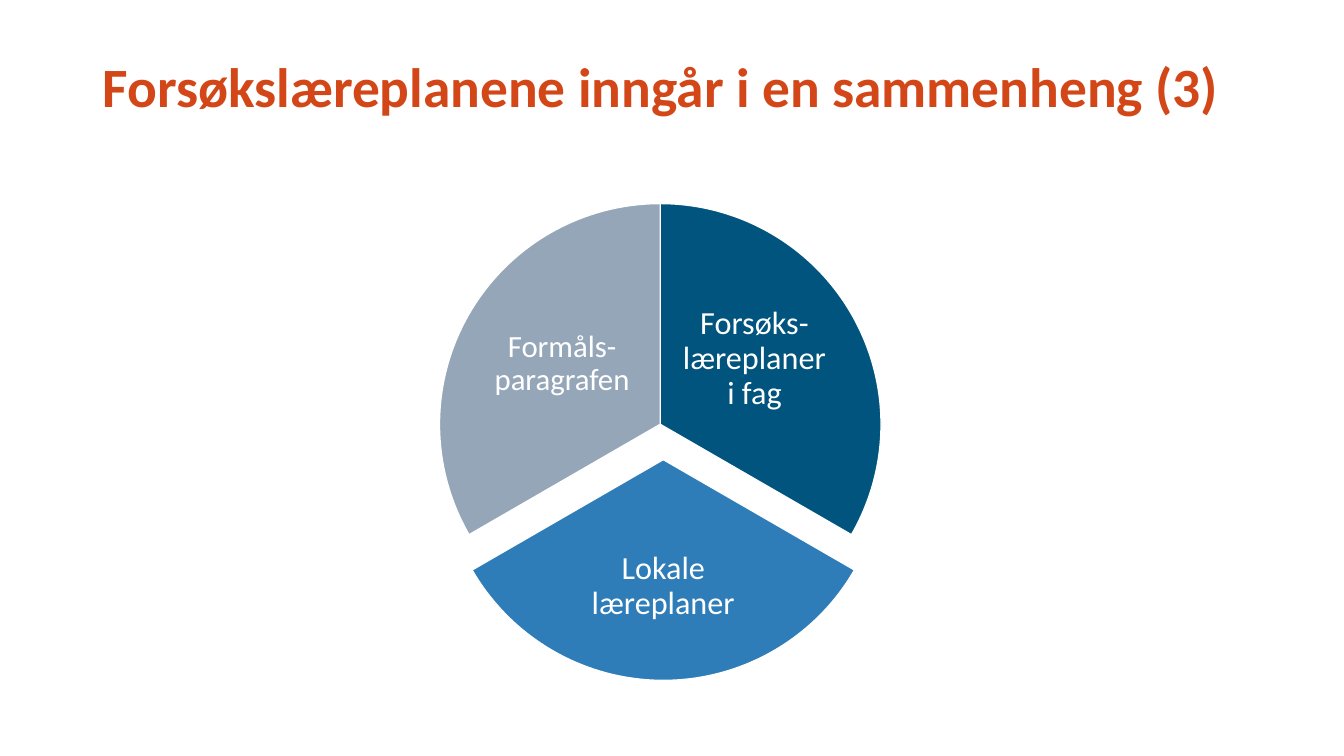
from dataclasses import dataclass
from pptx import Presentation
from pptx.dml.color import RGBColor
from pptx.enum.shapes import MSO_SHAPE
from pptx.enum.text import MSO_ANCHOR, PP_ALIGN
from pptx.util import Pt


@dataclass(frozen=True)
class Theme:
    font: str = "Calibri"
    title: str = "D24617"
    white: str = "FFFFFF"
    navy: str = "00547E"
    blue: str = "2E7CB8"
    gray: str = "95A6B9"
    head: float = 39.6
    body: float = 23
    small: float = 22


THEME = Theme()
DISC = 315.4

# text, fill, type size, start and end angle, slice shift, label box in the slice
PARTS = [
    ("Forsøks-læreplaner i fag", THEME.navy, THEME.body,
     270, 30, (0, 0), (171.4, 58.4, 107.3, 105.1)),
    ("Lokale læreplaner", THEME.blue, THEME.body,
     30, 150, (2.2, 25.2), (86.4, 199.5, 142.6, 97.9)),
    ("Formåls-paragrafen", THEME.gray, THEME.small,
     150, 270, (0, 0), (33.9, 62, 107.3, 105.1)),
]


def apply(item, form):
    for name, value in form.items():
        setattr(item, name, value)


def write(slide, box, text, size, color, bold, align, pads):
    """Add a text box; pads are its side and top insets."""
    frame = slide.shapes.add_textbox(*map(Pt, box)).text_frame
    side, top = map(Pt, pads)
    apply(frame, {
        "word_wrap": True, "vertical_anchor": MSO_ANCHOR.MIDDLE,
        "margin_left": side, "margin_right": side,
        "margin_top": top, "margin_bottom": top,
    })
    line = frame.paragraphs[0]
    apply(line, {"alignment": align, "line_spacing": 0.9})
    run = line.add_run()
    run.text = text
    apply(run.font, {"name": THEME.font, "size": Pt(size), "bold": bold})
    run.font.color.rgb = RGBColor.from_string(color)


def title(slide, box):
    write(slide, box, "Forsøkslæreplanene inngår i en sammenheng (3)",
          THEME.head, THEME.title, True, PP_ALIGN.LEFT, (7.2, 3.6))


def wedge(slide, box, fill, start, end):
    """Add one pie slice; angles run clockwise from three o'clock."""
    pie = slide.shapes.add_shape(MSO_SHAPE.PIE, *map(Pt, box))
    pie.shadow.inherit = False
    for spot, angle in enumerate((start, end)):
        pie.adjustments[spot] = angle * 0.6
    pie.fill.solid()
    pie.fill.fore_color.rgb = RGBColor.from_string(fill)
    pie.line.color.rgb = RGBColor.from_string(THEME.white)
    pie.line.width = Pt(1)


def wheel(slide, box):
    left, top, wide, high = box
    for text, fill, size, start, end, shift, label in PARTS:
        x, y = left + shift[0], top + shift[1]
        wedge(slide, (x, y, wide, high), fill, start, end)
        dx, dy, w, h = label
        write(slide, (x + dx, y + dy, w, h), text, size,
              THEME.white, False, PP_ALIGN.CENTER, (2.3, 2.3))


def main():
    deck = Presentation()
    apply(deck, {"slide_width": Pt(960), "slide_height": Pt(540)})
    slide = deck.slides.add_slide(deck.slide_layouts[6])
    title(slide, (66.2, 28.8, 828, 69.8))
    wheel(slide, (313.9, 145.4, DISC, DISC))
    deck.save("out.pptx")


if __name__ == "__main__":
    main()
